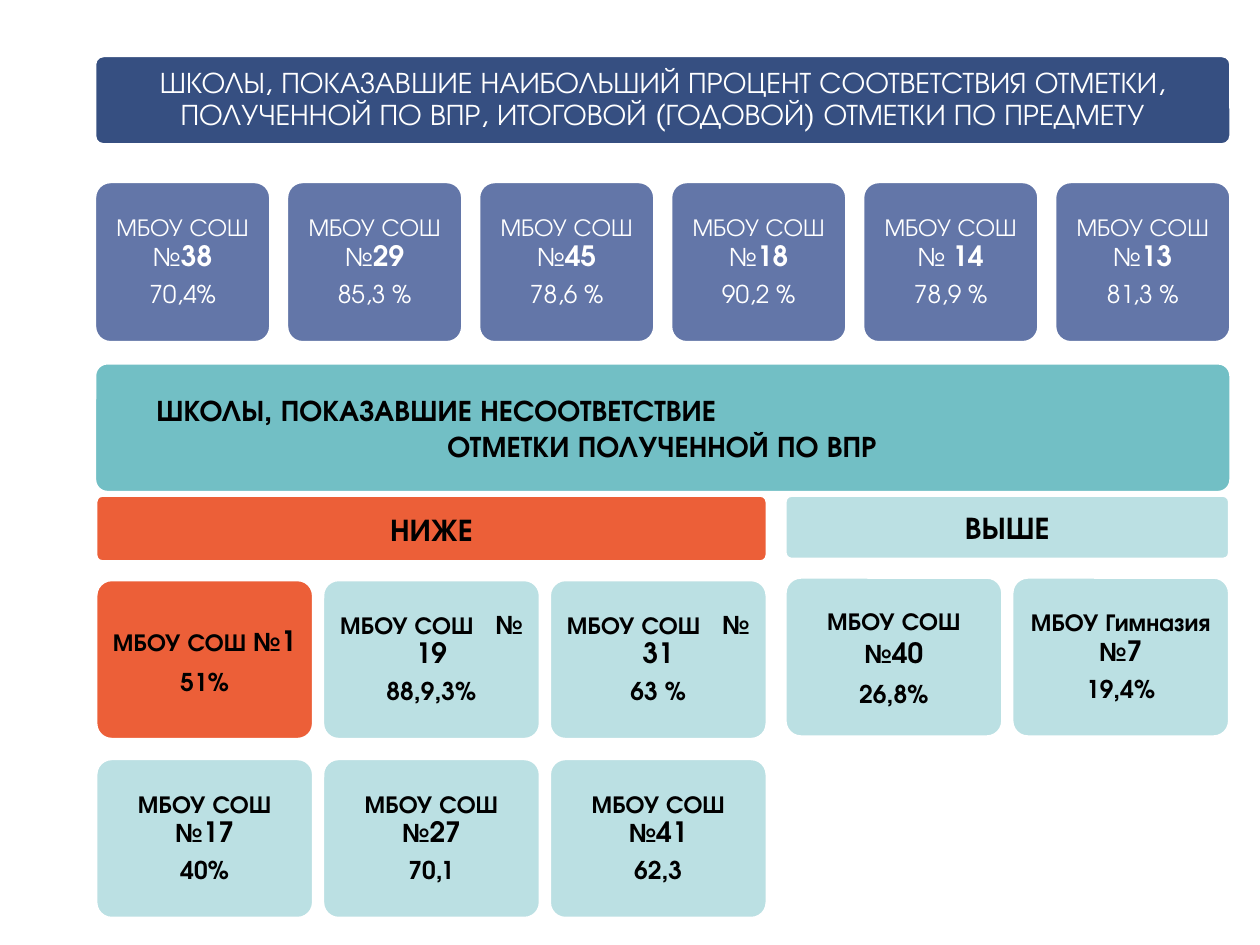
from lxml.etree import SubElement
from pptx import Presentation
from pptx.dml.color import RGBColor
from pptx.enum.shapes import MSO_SHAPE as Shape
from pptx.enum.text import MSO_ANCHOR as Anchor, MSO_AUTO_SIZE as AutoSize, PP_ALIGN as Align
from pptx.oxml.ns import qn
from pptx.util import Inches, Pt

THEME = {
    "font": "TeX Gyre Adventor",
    "navy": "002060", "blue": "3F5795", "teal": "72BFC5",
    "orange": "EC5F38", "pale": "BBE0E3", "white": "FFFFFF", "black": "000000",
    "banner": 17, "heading": 18, "label": 14, "number": 16,
    "border": 2, "navy_alpha": 79, "blue_alpha": 81, "wide_gap": 8.5,
}

TITLE = ("ШКОЛЫ, ПОКАЗАВШИЕ НАИБОЛЬШИЙ ПРОЦЕНТ СООТВЕТСТВИЯ ОТМЕТКИ, "
         "ПОЛУЧЕННОЙ ПО ВПР, ИТОГОВОЙ (ГОДОВОЙ) ОТМЕТКИ ПО ПРЕДМЕТУ")
MISMATCH = [("ШКОЛЫ, ПОКАЗАВШИЕ НЕСООТВЕТСТВИЕ", 0.39), ("ОТМЕТКИ ПОЛУЧЕННОЙ ПО ВПР", 2.7)]
SCHOOL = "МБОУ СОШ №"
MATCHING = [
    (SCHOOL, "38", "70,4%"), (SCHOOL, "29", "85,3 %"), (SCHOOL, "45", "78,6 %"),
    (SCHOOL, "18", "90,2 %"), (SCHOOL + " ", "14", "78,9 %"), (SCHOOL, "13", "81,3 %"),
]
GROUPS = [
    {"heading": "НИЖЕ", "left": 0.76, "width": 5.33, "height": 0.53, "fill": "orange", "top": 4.6,
     "rows": [
         [(SCHOOL, "1", "51%", {"fill": "orange", "spacing": 1}),
          (SCHOOL, "19", "88,9,3%", {"broken": True}),
          (SCHOOL, "31", "63 %", {"broken": True})],
         [(SCHOOL, "17", "40%", {}), (SCHOOL, "27", "70,1", {}), (SCHOOL, "41", "62,3", {})],
     ]},
    {"heading": "ВЫШЕ", "left": 6.23, "width": 3.53, "height": 0.51, "fill": "pale", "top": 4.58,
     "rows": [[(SCHOOL, "40", "26,8%", {"spacing": 1}), ("МБОУ Гимназия №", "7", "19,4%", {})]]},
]

LEFT, WIDTH = 0.75, 9.02
TITLE_AREA = (LEFT, 0.44, WIDTH, 0.71)
MATCH_TOP, MATCH_WIDTH, MATCH_HEIGHT = 1.44, 1.4, 1.28
CARD_WIDTH, CARD_HEIGHT, CARD_STEP, ROW_STEP = 1.73, 1.27, 1.8, 1.42


def color(name):
    return RGBColor.from_string(THEME[name])


def add_box(page, area, fill, alpha=None):
    box = page.shapes.add_shape(Shape.ROUNDED_RECTANGLE, *map(Inches, area))
    box.adjustments[0] = 0.1
    box.shadow.inherit = False
    box.fill.solid()
    box.fill.fore_color.rgb = color(fill)
    box.line.color.rgb = color("white")
    box.line.width = Pt(THEME["border"])
    if alpha:
        tint = box.fill._xPr.find(qn("a:solidFill"))[0]
        SubElement(tint, qn("a:alpha")).set("val", str(alpha * 1000))
    return box


def write_text(box, paragraphs, ink="black", bold=False, spacing=1, inset=0.06,
               align=Align.CENTER, indents=(), after=0.4):
    frame = box.text_frame
    frame.word_wrap = True
    frame.auto_size = AutoSize.NONE
    frame.vertical_anchor = Anchor.MIDDLE
    frame.margin_left = frame.margin_right = Inches(inset)
    frame.margin_top = frame.margin_bottom = Inches(inset)
    for index, spans in enumerate(paragraphs):
        para = frame.add_paragraph() if index else frame.paragraphs[0]
        para.alignment = align
        para.line_spacing = spacing
        para.space_before = Pt(0)
        para.space_after = Pt(round(spans[0][1] * after, 1))
        if indents:
            para._p.get_or_add_pPr().set("marL", str(Inches(indents[index])))
        for text, size, *options in spans:
            if text == "\n":
                para.add_line_break()
                continue
            style = options[0] if options else {}
            span = para.add_run()
            span.text = text
            span.font.name = THEME["font"]
            span.font.size = Pt(size)
            span.font.bold = style.get("bold", bold)
            span.font.color.rgb = color(ink)
            if "gap" in style:
                span.font._element.set("spc", str(int(style["gap"] * 100)))


def school_text(label, number, value, broken=False):
    size = THEME["label"]
    name = [(label, size)]
    if broken:
        words, sign = label.rsplit(" ", 1)
        name = [(words, size), (" ", size, {"gap": THEME["wide_gap"]}), (sign, size), ("\n", size)]
    return [name + [(number, THEME["number"], {"bold": True})], [(value, size)]]


def add_matching(page):
    step = (WIDTH - MATCH_WIDTH) / (len(MATCHING) - 1)
    for index, school in enumerate(MATCHING):
        area = (LEFT + index * step, MATCH_TOP, MATCH_WIDTH, MATCH_HEIGHT)
        box = add_box(page, area, "blue", THEME["blue_alpha"])
        write_text(box, school_text(*school), ink="white", spacing=0.9)


def add_group(page, group):
    heading = add_box(page, (group["left"], 3.93, group["width"], group["height"]), group["fill"])
    write_text(heading, [[(group["heading"], THEME["heading"])]], bold=True, inset=0.07)
    for row, schools in enumerate(group["rows"]):
        for column, (label, number, value, style) in enumerate(schools):
            area = (group["left"] + column * CARD_STEP, group["top"] + row * ROW_STEP,
                    CARD_WIDTH, CARD_HEIGHT)
            box = add_box(page, area, style.get("fill", "pale"))
            write_text(box, school_text(label, number, value, style.get("broken", False)),
                       bold=True, spacing=style.get("spacing", 0.9))


def main():
    deck = Presentation()
    deck.slide_width, deck.slide_height = Inches(10), Inches(7.5)
    page = deck.slides.add_slide(deck.slide_layouts[5])

    add_box(page, TITLE_AREA, "navy", THEME["navy_alpha"])
    title = page.shapes.title
    title.left, title.top, title.width, title.height = map(Inches, TITLE_AREA)
    page.shapes._spTree.append(title._element)
    write_text(title, [[(TITLE, THEME["banner"])]], ink="white", spacing=0.9, inset=0.07)

    add_matching(page)
    banner = add_box(page, (LEFT, 2.88, WIDTH, 1.03), "teal")
    write_text(banner, [[(text, THEME["banner"])] for text, _ in MISMATCH], bold=True,
               inset=0.07, align=Align.LEFT, indents=[indent for _, indent in MISMATCH], after=0)
    for group in GROUPS:
        add_group(page, group)
    deck.save("out.pptx")


if __name__ == "__main__":
    main()
